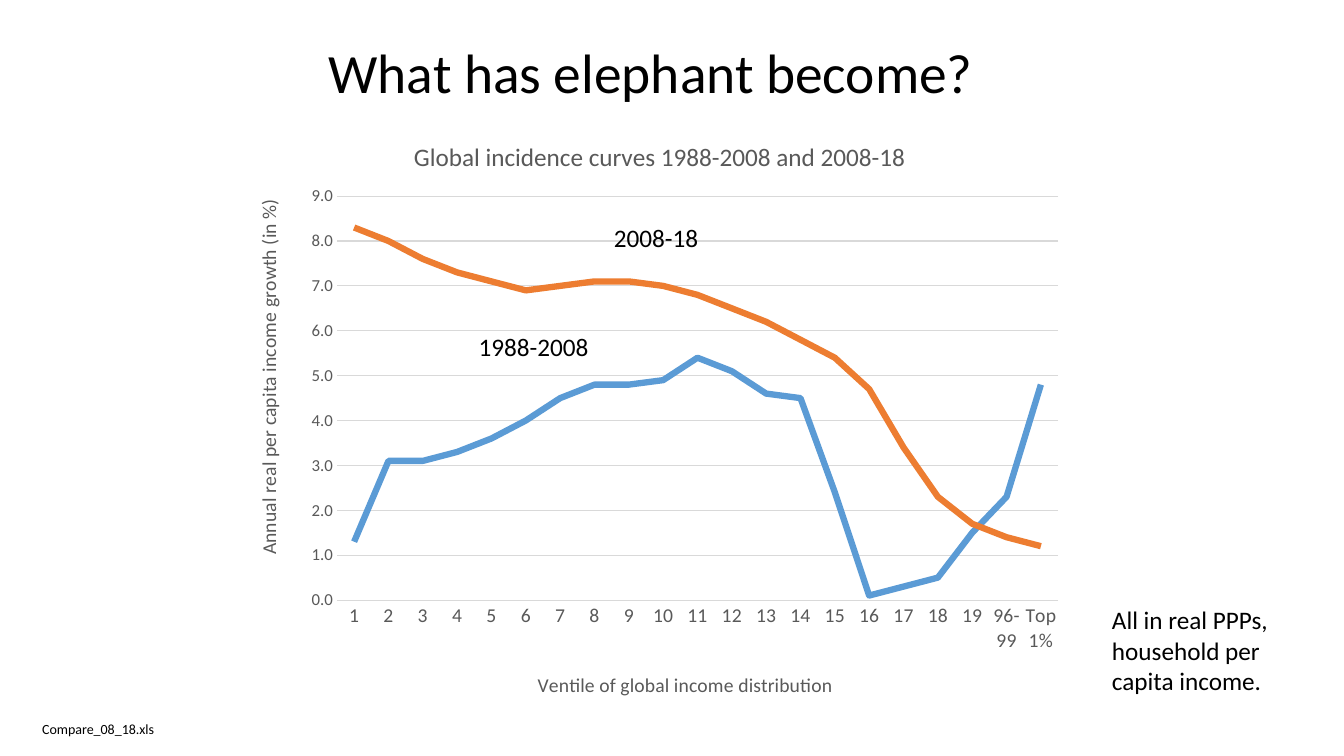
"""Build a slide with a line chart comparing two global income growth curves."""
from lxml.etree import SubElement
from pptx import Presentation
from pptx.chart.data import CategoryChartData
from pptx.dml.color import RGBColor
from pptx.enum.chart import XL_CHART_TYPE, XL_TICK_MARK
from pptx.enum.text import MSO_ANCHOR, PP_ALIGN
from pptx.oxml.ns import qn
from pptx.util import Inches, Pt

GREY, GRID = "595959", "D9D9D9"


def style_font(font, size, color):
    font.name = "Calibri"
    font.size = Pt(size)
    font.bold = False
    font.color.rgb = RGBColor.from_string(color)


def add_text(text, left, top, width, height, size=18, align=PP_ALIGN.LEFT,
             anchor=MSO_ANCHOR.TOP, spacing=1.0):
    frame = slide.shapes.add_textbox(
        Inches(left), Inches(top), Inches(width), Inches(height)).text_frame
    frame.word_wrap = True
    frame.vertical_anchor = anchor
    paragraph = frame.paragraphs[0]
    paragraph.alignment = align
    paragraph.line_spacing = spacing
    run = paragraph.add_run()
    run.text = text
    style_font(run.font, size, "000000")


presentation = Presentation()
presentation.slide_width = Inches(13.33)
presentation.slide_height = Inches(7.5)
slide = presentation.slides.add_slide(presentation.slide_layouts[6])

add_text("What has elephant become?", 0.9, 0.4, 11.11, 0.7, size=39.6,
         align=PP_ALIGN.CENTER, anchor=MSO_ANCHOR.MIDDLE, spacing=0.9)

chart_data = CategoryChartData(number_format="0.0")
chart_data.categories = [str(ventile) for ventile in range(1, 20)] + ["96-99", "Top 1%"]
chart_data.add_series("1988-2008", [
    1.3, 3.1, 3.1, 3.3, 3.6, 4, 4.5, 4.8, 4.8, 4.9, 5.4,
    5.1, 4.6, 4.5, 2.4, 0.1, 0.3, 0.5, 1.5, 2.3, 4.8])
chart_data.add_series("2008-18", [
    8.3, 8, 7.6, 7.3, 7.1, 6.9, 7, 7.1, 7.1, 7, 6.8,
    6.5, 6.2, 5.8, 5.4, 4.7, 3.4, 2.3, 1.7, 1.4, 1.2])
chart = slide.shapes.add_chart(
    XL_CHART_TYPE.LINE, Inches(2.41), Inches(1.1), Inches(8.25), Inches(6), chart_data).chart
chart.has_legend = False
style_font(chart.font, 10, "000000")

plot = chart.plots[0]
plot.vary_by_categories = False
for series, color in zip(plot.series, ["5B9BD5", "ED7D31"]):
    series.smooth = False
    series.format.line.color.rgb = RGBColor.from_string(color)
    series.format.line.width = Pt(4.5)

category_axis, value_axis = chart.category_axis, chart.value_axis
for axis, size in [(category_axis, 14), (value_axis, 12)]:
    axis.major_tick_mark = XL_TICK_MARK.NONE
    axis.minor_tick_mark = XL_TICK_MARK.NONE
    style_font(axis.tick_labels.font, size, GREY)
value_axis.minimum_scale, value_axis.maximum_scale, value_axis.major_unit = 0, 9, 1
value_axis.tick_labels.number_format = "0.0"
value_axis.tick_labels.number_format_is_linked = False
value_axis.format.line.fill.background()
for line in [category_axis.format.line, value_axis.major_gridlines.format.line]:
    line.color.rgb = RGBColor.from_string(GRID)
    line.width = Pt(0.75)

layouts = [(chart.plots[0]._element.getparent(), 0,
            {"layoutTarget": "inner", "xMode": "edge", "yMode": "edge",
             "x": 0.113, "y": 0.141, "w": 0.867, "h": 0.668})]
for owner, text, size, x, y in [
        (chart, "Global incidence curves 1988-2008 and 2008-18", 18, 0.2, 0.04),
        (category_axis, "Ventile of global income distribution", 14, 0.35, 0.92),
        (value_axis, "Annual real per capita income growth (in %)", 14, 0.01, 0.14)]:
    title = owner.chart_title if owner is chart else owner.axis_title
    run = title.text_frame.paragraphs[0].add_run()
    run.text = text
    style_font(run.font, size, GREY)
    layouts.append((title._element, 1, {"xMode": "edge", "yMode": "edge", "x": x, "y": y}))

for element, position, settings in layouts:
    for old_layout in element.findall(qn("c:layout")):
        element.remove(old_layout)
    layout = SubElement(element, qn("c:layout"))
    element.insert(position, layout)
    manual_layout = SubElement(layout, qn("c:manualLayout"))
    for name, value in settings.items():
        SubElement(manual_layout, qn(f"c:{name}")).set("val", str(value))

add_text("2008-18", 5.99, 2.16, 1.36, 0.4)
add_text("1988-2008", 4.65, 3.24, 1.34, 0.4)
add_text("All in real PPPs, household per capita income.", 10.93, 5.95, 2.15, 1.01)
add_text("Compare_08_18.xls", 0.32, 7.1, 3.63, 0.27, size=10)

presentation.save("out.pptx")
